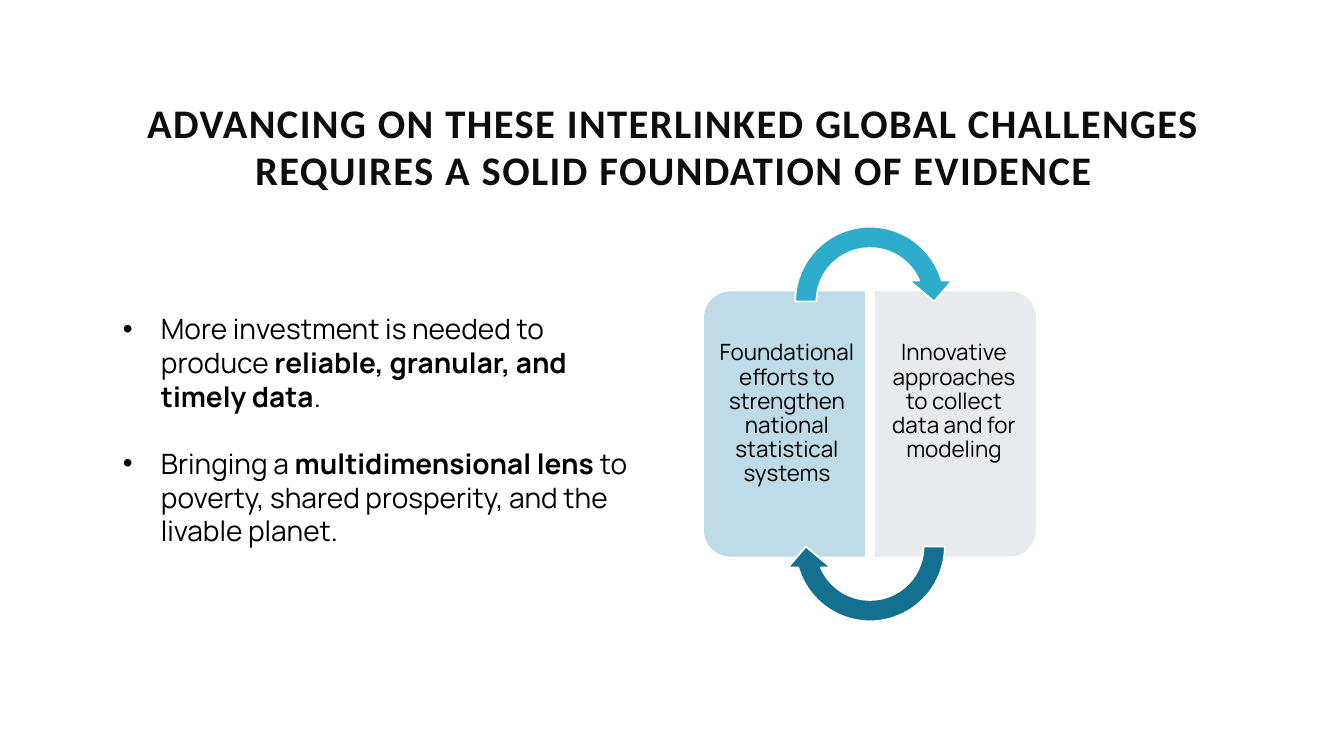
from lxml.etree import SubElement
from pptx import Presentation
from pptx.dml.color import RGBColor
from pptx.enum.shapes import MSO_SHAPE
from pptx.enum.text import MSO_ANCHOR, MSO_AUTO_SIZE, PP_ALIGN
from pptx.oxml.ns import qn
from pptx.util import Emu, Pt

EMU_PER_PX = 914400 / 100.8
BLACK = RGBColor(0x00, 0x00, 0x00)
INK = RGBColor(0x0D, 0x0D, 0x0D)
WHITE = RGBColor(0xFF, 0xFF, 0xFF)
PALE_BLUE = RGBColor(0xBE, 0xDB, 0xE7)
PALE_GREY = RGBColor(0xE8, 0xEB, 0xEE)
SKY = RGBColor(0x2E, 0xAC, 0xCB)
TEAL = RGBColor(0x14, 0x70, 0x8F)

HEADING = ("ADVANCING ON THESE INTERLINKED GLOBAL CHALLENGES "
           "REQUIRES A SOLID FOUNDATION OF EVIDENCE")
NEEDS = [
    [("More investment is needed to produce ", False),
     ("reliable, granular, and timely data", True), (".", False)],
    [("Bringing a ", False), ("multidimensional lens ", True),
     ("to poverty, shared prosperity, and the livable planet.", False)],
]
EFFORTS = [
    ("Foundational efforts to strengthen national statistical systems", PALE_BLUE, 270, 8, 7, 10),
    ("Innovative approaches to collect data and for modeling", PALE_GREY, 90, 1, 10, 7),
]


def px(length):
    """Turn pixels into EMU."""
    return Emu(round(length * EMU_PER_PX))


def style_font(font, name, size, color, bold=False):
    """Give a font its face, size, colour and weight."""
    font.name, font.size, font.bold = name, Pt(size), bold
    font.color.rgb = color


def add_heading(slide, left, top, width, height):
    """Move the title placeholder into its box and format it."""
    heading = slide.shapes.title
    heading.left, heading.top, heading.width, heading.height = map(px, (left, top, width, height))
    frame = heading.text_frame
    frame.text = HEADING
    frame.auto_size = MSO_AUTO_SIZE.NONE
    frame.vertical_anchor = MSO_ANCHOR.MIDDLE
    line = frame.paragraphs[0]
    line.alignment = PP_ALIGN.CENTER
    line.line_spacing = 0.97
    run = line.runs[0]
    style_font(run.font, "Calibri", 29, INK, True)
    run._r.get_or_add_rPr().set("spc", "100")


def add_needs(slide, left, top, width, height):
    """Write the bulleted needs with bold key phrases."""
    frame = slide.shapes.add_textbox(*map(px, (left, top, width, height))).text_frame
    frame.word_wrap = True
    for index, need in enumerate(NEEDS):
        paragraph = frame.paragraphs[0] if index == 0 else frame.add_paragraph()
        properties = paragraph._p.get_or_add_pPr()
        properties.set("marL", str(px(38)))
        properties.set("indent", str(-px(38)))
        SubElement(properties, qn("a:buFont")).set("typeface", "Arial")
        SubElement(properties, qn("a:buChar")).set("char", "•")
        if index:
            paragraph.space_before = Pt(24)
        for phrase, bold in need:
            run = paragraph.add_run()
            run.text = phrase
            style_font(run.font, "Manrope", 20, BLACK, bold)


def add_outlined(slide, preset, box, rotation, fill, adjustments):
    """Add a filled preset shape with a white outline."""
    shape = slide.shapes.add_shape(preset, *map(px, box))
    shape.shadow.inherit = False
    shape.rotation = rotation
    shape.fill.solid()
    shape.fill.fore_color.rgb = fill
    shape.line.color.rgb = WHITE
    shape.line.width = Pt(1.25)
    for index, value in enumerate(adjustments):
        shape.adjustments[index] = value


def add_effort_text(slide, effort, box, inset_left, inset_right):
    """Write the centred text of one panel."""
    frame = slide.shapes.add_textbox(*map(px, box)).text_frame
    frame.word_wrap = True
    frame.margin_left, frame.margin_right = px(inset_left), px(inset_right)
    frame.margin_top, frame.margin_bottom = px(43), px(11)
    frame.text = effort
    paragraph = frame.paragraphs[0]
    paragraph.alignment = PP_ALIGN.CENTER
    paragraph.line_spacing = 0.9
    style_font(paragraph.runs[0].font, "Manrope", 16, BLACK)


def add_cycle(slide, left, top, width, height):
    """Draw two facing panels linked by a pair of curved arrows."""
    panel_width, panel_height, arrow = 163, 267, 171
    panel_top = top + (height - panel_height) / 2
    turn = (panel_height - panel_width) / 2
    for index, (effort, fill, rotation, shift, inset_left, inset_right) in enumerate(EFFORTS):
        panel_left = left + index * (width - panel_width)
        panel = (panel_left - turn, panel_top + turn, panel_height, panel_width)
        add_outlined(slide, MSO_SHAPE.ROUND_2_SAME_RECTANGLE, panel, rotation, fill, (0.167, 0))
        text_box = (panel_left + shift, panel_top + 8, 155, panel_height - 16)
        add_effort_text(slide, effort, text_box, inset_left, inset_right)
    arrow_left = left + (width - arrow) / 2
    for arrow_top, rotation, fill in ((top, 0, SKY), (top + height - arrow, 180, TEAL)):
        add_outlined(slide, MSO_SHAPE.CIRCULAR_ARROW, (arrow_left, arrow_top, arrow, arrow),
                     rotation, fill, (0.125, 11.423, 204.577, 108, 0.125))


def main():
    """Build and save the slide."""
    deck = Presentation()
    deck.slide_width, deck.slide_height = px(1344), px(756)
    slide = deck.slides.add_slide(deck.slide_layouts[5])
    add_heading(slide, 113, 65, 1122, 165)
    add_needs(slide, 113, 307, 528, 248)
    add_cycle(slide, 703, 216, 334, 416)
    deck.save("out.pptx")


if __name__ == "__main__":
    main()
